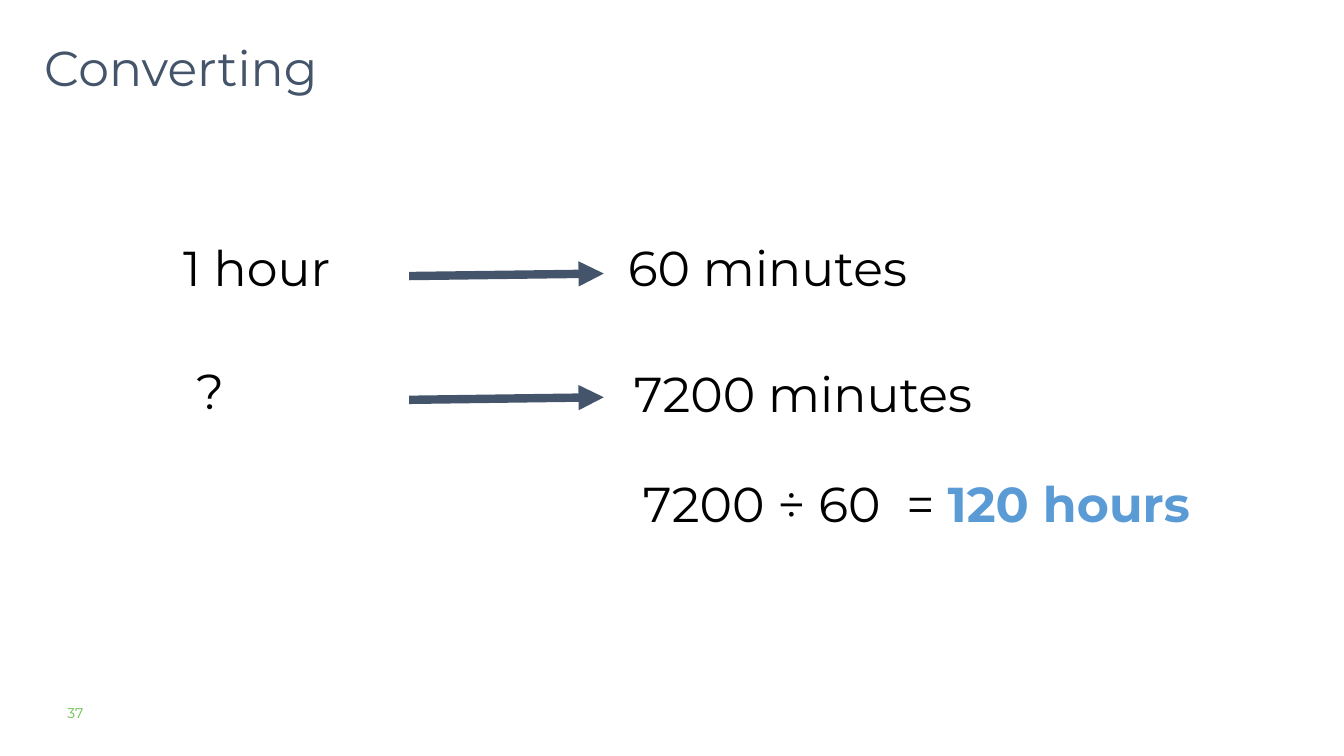
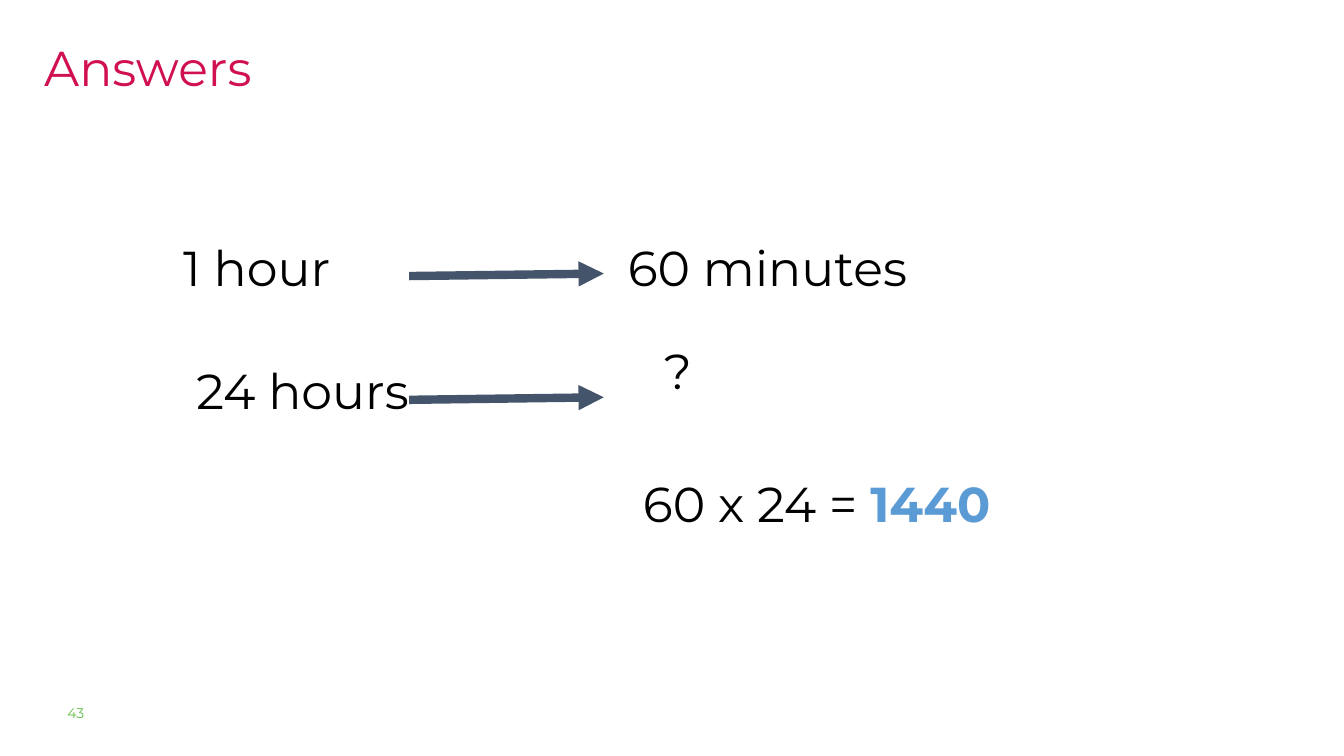
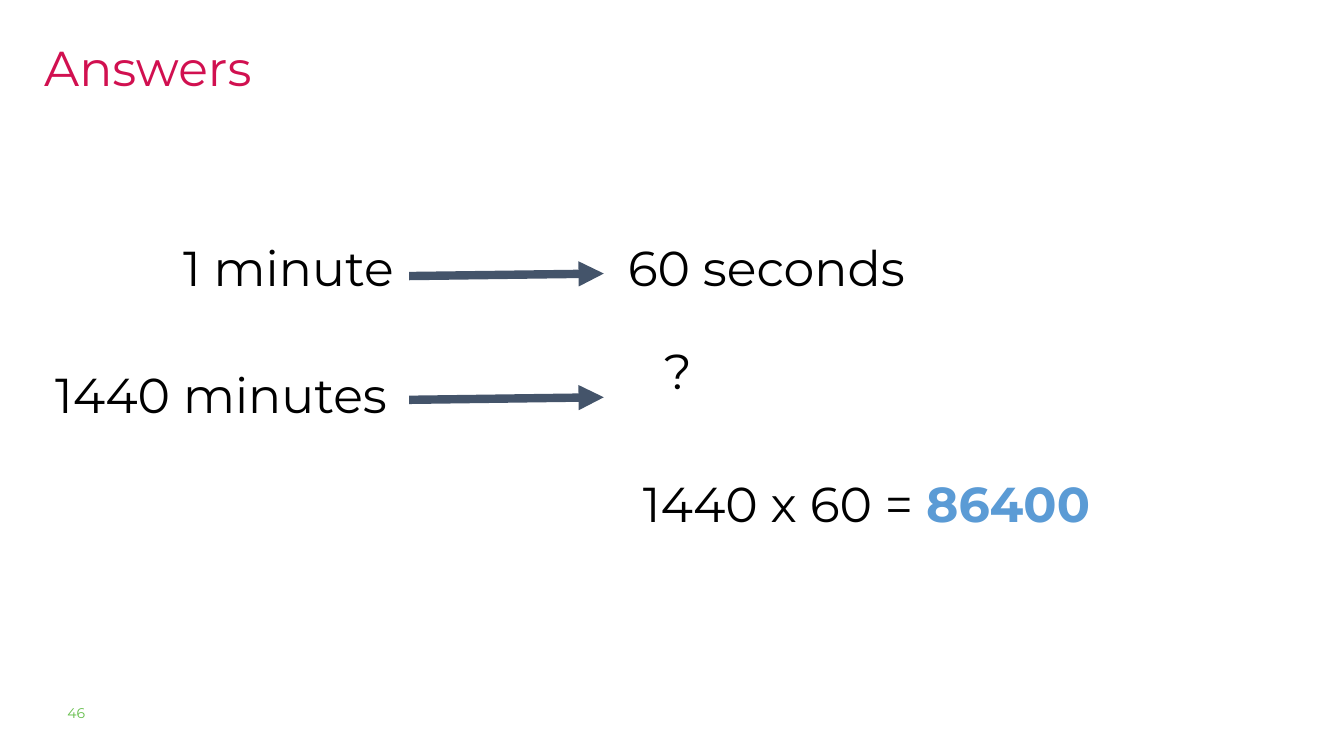
"""Build three slides that convert units of time."""
import dataclasses

import lxml.etree
import pptx
import pptx.dml.color
import pptx.enum.shapes
import pptx.enum.text
import pptx.oxml.ns
import pptx.util

Pt = pptx.util.Pt


@dataclasses.dataclass(frozen=True)
class Theme:
    font: str = "Montserrat"
    ink: str = "000000"
    slate: str = "44546A"
    crimson: str = "D11050"
    result: str = "5B9BD5"
    page: str = "65BE4B"
    text_size: float = 35
    page_size: float = 10
    arrow_width: float = 6


theme = Theme()


def add_text(slide, box, runs, size=theme.text_size, inset=(7.2, 7.2), line_spacing=1.0):
    """Add a text box whose runs are (text, colour, bold)."""
    shape = slide.shapes.add_textbox(*[Pt(length) for length in box])
    frame = shape.text_frame
    frame.word_wrap = True
    frame.vertical_anchor = pptx.enum.text.MSO_ANCHOR.TOP
    frame.margin_left = frame.margin_right = Pt(inset[0])
    frame.margin_top = frame.margin_bottom = Pt(inset[1])
    paragraph = frame.paragraphs[0]
    paragraph.line_spacing = line_spacing
    for text, colour, bold in runs:
        run = paragraph.add_run()
        run.text = text
        run.font.name = theme.font
        run.font.size = Pt(size)
        run.font.bold = bold
        run.font.color.rgb = pptx.dml.color.RGBColor.from_string(colour)


def add_arrow(slide, start_x, start_y, end_x, end_y):
    """Add a thick arrow with a triangular head at its end."""
    arrow = slide.shapes.add_connector(
        pptx.enum.shapes.MSO_CONNECTOR.STRAIGHT, Pt(start_x), Pt(start_y), Pt(end_x), Pt(end_y)
    )
    arrow.line.width = Pt(theme.arrow_width)
    arrow.line.color.rgb = pptx.dml.color.RGBColor.from_string(theme.slate)
    outline = arrow.line._get_or_add_ln()
    lxml.etree.SubElement(outline, pptx.oxml.ns.qn("a:tailEnd"), type="triangle")
    lxml.etree.SubElement(arrow._element.spPr, pptx.oxml.ns.qn("a:effectLst"))


title_box = (24.5, 10.8, 352, 60.5)
page_box = (48.2, 503.3, 75.6, 18.7)
unit_box = (123.8, 162.7, 172, 67)
equivalent_box = (441.4, 162.7, 220.3, 67)
working_box = (452.2, 331.2, 410, 60.5)
unknown_right_box = (467.3, 236.2, 172, 67)
arrow_left, arrow_right = 292.3, 431.3
arrow_top, arrow_rise, row_pitch = 197.2, 1.8, 88.4

conversions = [
    {
        "title": "Converting", "title_colour": theme.slate, "page": "37",
        "unit": "1 hour", "equivalent": "60 minutes",
        "given": ("?", (133.2, 250.6, 172, 67)),
        "sought": ("7200 minutes", (445.7, 252.7, 266.4, 67)),
        "working": "7200 ÷ 60  = ", "result": "120 hours",
    },
    {
        "title": "Answers", "title_colour": theme.crimson, "page": "43",
        "unit": "1 hour", "equivalent": "60 minutes",
        "given": ("24 hours", (133.2, 250.6, 172, 67)),
        "sought": ("?", unknown_right_box),
        "working": "60 x 24 = ", "result": "1440",
    },
    {
        "title": "Answers", "title_colour": theme.crimson, "page": "46",
        "unit": "1 minute", "equivalent": "60 seconds",
        "given": ("1440 minutes", (32.4, 253.4, 270.7, 67)),
        "sought": ("?", unknown_right_box),
        "working": "1440 x 60 = ", "result": "86400",
    },
]

presentation = pptx.Presentation()
presentation.slide_width = Pt(960)
presentation.slide_height = Pt(540)
blank_layout = presentation.slide_layouts[6]

for conversion in conversions:
    slide = presentation.slides.add_slide(blank_layout)
    add_text(slide, page_box, [(conversion["page"], theme.page, False)], theme.page_size, (0, 0))
    add_text(
        slide, title_box, [(conversion["title"], conversion["title_colour"], False)],
        inset=(7.2, 3.6), line_spacing=1.3,
    )
    quantities = [
        (conversion["unit"], unit_box),
        (conversion["equivalent"], equivalent_box),
        conversion["given"],
        conversion["sought"],
    ]
    for text, box in quantities:
        add_text(slide, box, [(text, theme.ink, False)])
    for row in range(2):
        start_y = arrow_top + row * row_pitch
        add_arrow(slide, arrow_left, start_y, arrow_right, start_y - arrow_rise)
    add_text(
        slide, working_box,
        [(conversion["working"], theme.ink, False), (conversion["result"], theme.result, True)],
    )

presentation.save("out.pptx")
